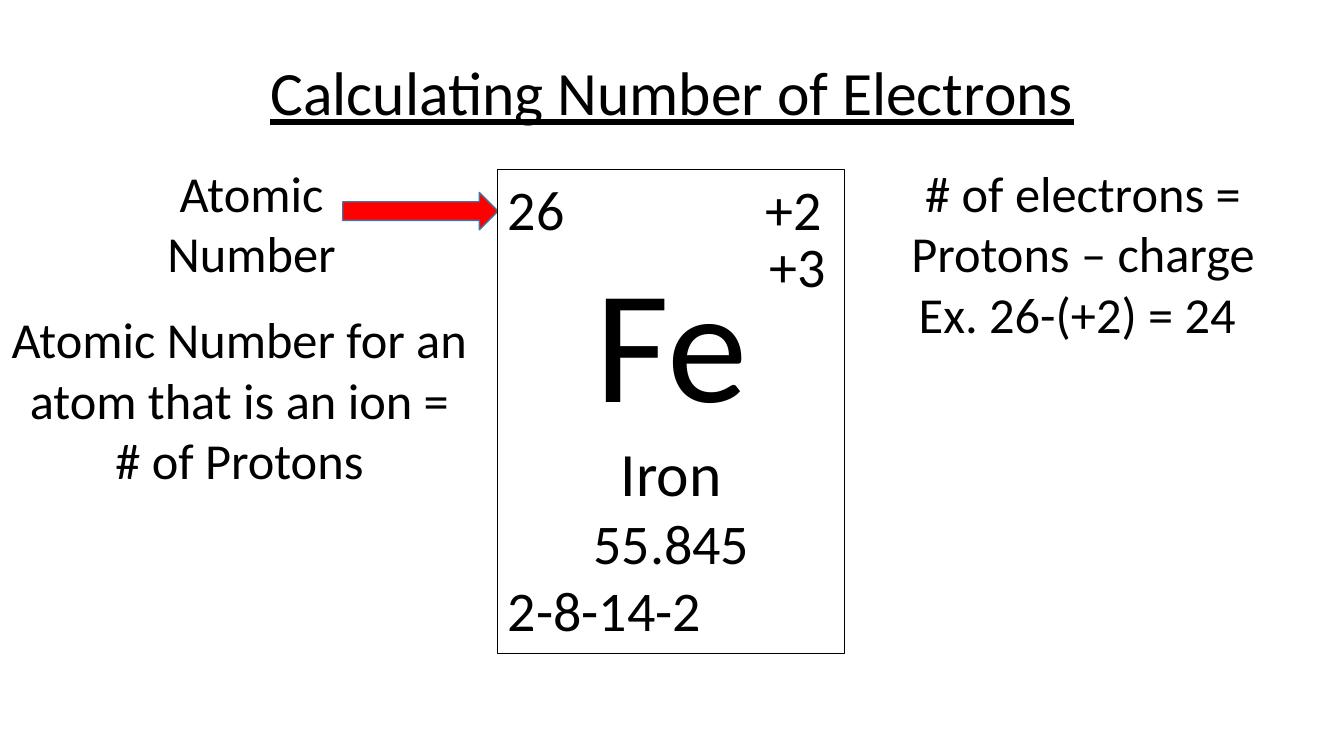
from dataclasses import dataclass

from lxml.etree import SubElement
from pptx import Presentation
from pptx.dml.color import RGBColor
from pptx.enum.shapes import MSO_SHAPE
from pptx.enum.text import MSO_ANCHOR, PP_ALIGN
from pptx.oxml.ns import qn
from pptx.util import Cm, Pt


@dataclass(frozen=True)
class Theme:
    """Font, colours and type sizes of the slide."""
    font: str = "Calibri"
    ink: str = "000000"
    paper: str = "FFFFFF"
    arrow: str = "FF0000"
    arrow_edge: str = "43739E"
    symbol: int = 115
    heading: int = 44
    figure: int = 40
    note: int = 36


class ElementSlide:
    """Draws the parts of an element diagram on one slide."""

    def __init__(self, deck, theme):
        self.theme = theme
        self.slide = deck.slides.add_slide(deck.slide_layouts[6])

    def fill_frame(self, frame, lines):
        """Fill a frame with (text, size, alignment) lines."""
        frame.word_wrap = True
        frame.vertical_anchor = MSO_ANCHOR.TOP
        for index, (text, size, alignment) in enumerate(lines):
            para = frame.add_paragraph() if index else frame.paragraphs[0]
            para.text = text
            para.alignment = alignment
            for span in para.runs:
                span.font.name = self.theme.font
                span.font.size = Pt(size)
                span.font.color.rgb = RGBColor.from_string(self.theme.ink)

    def text(self, left, top, width, height, lines):
        """Add a text box."""
        box = self.slide.shapes.add_textbox(Cm(left), Cm(top), Cm(width), Cm(height))
        self.fill_frame(box.text_frame, lines)
        return box

    def note(self, left, top, width, height, *texts):
        """Add a centred explanation."""
        lines = [(text, self.theme.note, PP_ALIGN.CENTER) for text in texts]
        return self.text(left, top, width, height, lines)

    def title(self, left, top, width, height, text):
        """Add the underlined heading."""
        line = (text, self.theme.heading, PP_ALIGN.CENTER)
        frame = self.text(left, top, width, height, [line]).text_frame
        frame.vertical_anchor = MSO_ANCHOR.MIDDLE
        para = frame.paragraphs[0]
        para.line_spacing = 0.9
        para.runs[0].font.underline = True

    def shape(self, kind, left, top, width, height, fill, edge, weight):
        """Add a filled and outlined preset shape."""
        shape = self.slide.shapes.add_shape(kind, Cm(left), Cm(top), Cm(width), Cm(height))
        shape.shadow.inherit = False
        shape.fill.solid()
        shape.fill.fore_color.rgb = RGBColor.from_string(fill)
        shape.line.color.rgb = RGBColor.from_string(edge)
        shape.line.width = Pt(weight)
        return shape

    def card(self, left, top, width, height, lines, charge_stop):
        """Add the element card, with a tab stop for the charge."""
        theme = self.theme
        card = self.shape(MSO_SHAPE.RECTANGLE, left, top, width, height,
                          theme.paper, theme.ink, 0.75)
        self.fill_frame(card.text_frame, lines)
        properties = card.text_frame.paragraphs[0]._p.get_or_add_pPr()
        stops = SubElement(properties, qn("a:tabLst"))
        SubElement(stops, qn("a:tab"), pos=str(Cm(charge_stop)), algn="l")


def main():
    """Build and save the slide."""
    theme = Theme()
    deck = Presentation()
    deck.slide_width, deck.slide_height = Cm(33.87), Cm(19.05)
    page = ElementSlide(deck, theme)

    page.title(2.34, 0.58, 29.21, 3.68, "Calculating Number of Electrons")
    page.shape(MSO_SHAPE.RIGHT_ARROW, 8.64, 4.85, 3.91, 0.94,
               theme.arrow, theme.arrow_edge, 1)
    page.note(3.18, 3.96, 6.32, 3.33, "Atomic Number")
    page.note(0, 7.65, 12.07, 4.88,
              "Atomic Number for an atom that is an ion =", "# of Protons")
    page.card(12.55, 4.27, 8.74, 12.19, [
        ("26\t+2", theme.figure, PP_ALIGN.LEFT),
        ("Fe", theme.symbol, PP_ALIGN.CENTER),
        ("Iron", theme.heading, PP_ALIGN.CENTER),
        ("55.845", theme.figure, PP_ALIGN.CENTER),
        ("2-8-14-2", theme.figure, PP_ALIGN.LEFT),
    ], charge_stop=6.5)
    page.text(19.15, 5.72, 2.41, 1.96, [("+3", theme.figure, PP_ALIGN.LEFT)])
    page.note(21.26, 3.96, 12.07, 4.88,
              "# of electrons = Protons – charge", "Ex. 26-(+2) = 24 ")

    deck.save("out.pptx")


if __name__ == "__main__":
    main()
